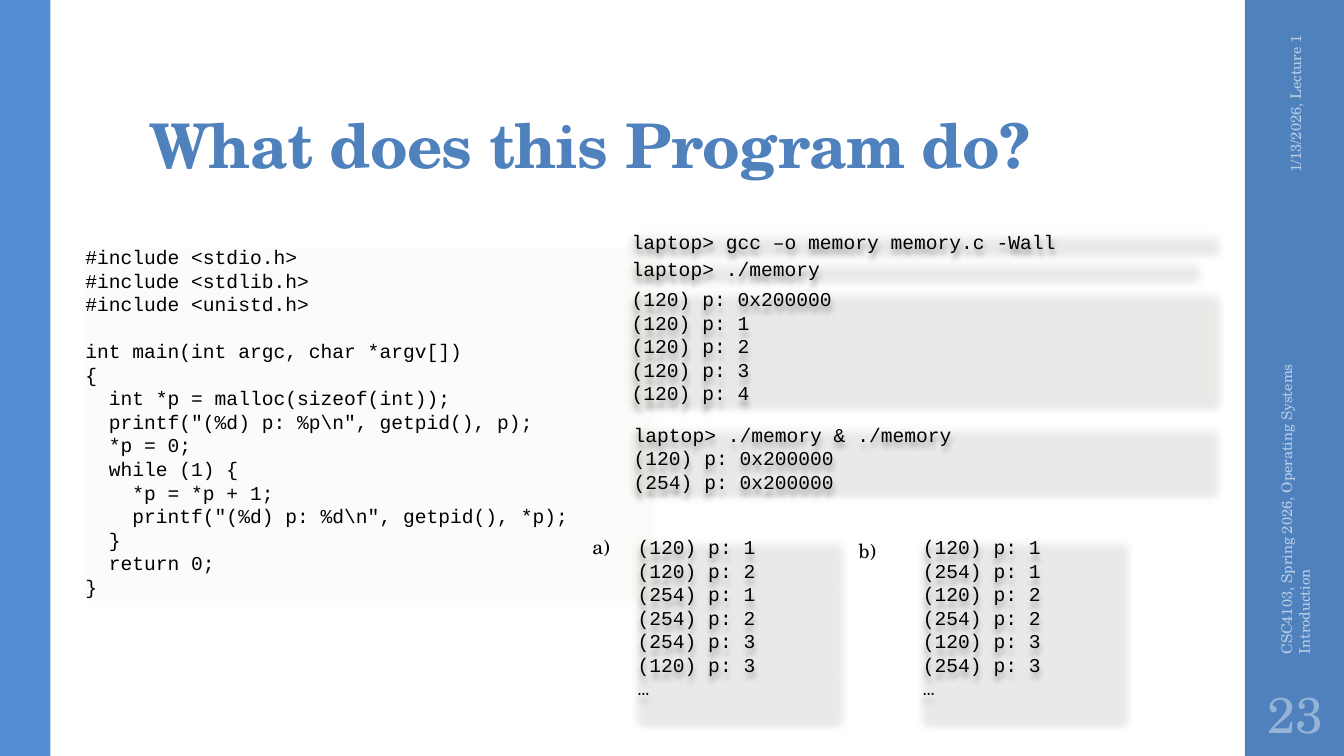
"""Build the slide that asks what a small C memory program prints."""
from dataclasses import dataclass

from lxml import etree
from pptx import Presentation
from pptx.dml.color import RGBColor
from pptx.enum import shapes, text
from pptx.oxml import ns
from pptx.util import Cm, Pt


@dataclass(frozen=True)
class Theme:
    """Colours, fonts and type sizes of the slide."""
    blue: str = "4F81BD"
    light_blue: str = "558ED5"
    panel: str = "EEECE1"
    black: str = "000000"
    footer: str = "B9CDE5"
    number: str = "95B3D7"
    serif: str = "TeX Gyre Schola"
    mono: str = "Courier New"
    title_size: float = 44
    number_size: float = 36
    body_size: float = 14
    footer_size: float = 10.5


@dataclass(frozen=True)
class Box:
    """A rectangle in centimetres."""
    left: float
    top: float
    width: float
    height: float

    def emu(self) -> tuple[Cm, Cm, Cm, Cm]:
        """Return the rectangle as lengths."""
        return Cm(self.left), Cm(self.top), Cm(self.width), Cm(self.height)


@dataclass(frozen=True)
class Panel:
    """A pale panel of monospaced lines."""
    box: Box
    lines: str
    shadow: bool = True


@dataclass(frozen=True)
class Label:
    """A piece of serif text with its format."""
    box: Box
    words: str
    size: float
    color: str
    align: text.PP_ALIGN = text.PP_ALIGN.LEFT
    anchor: text.MSO_ANCHOR = text.MSO_ANCHOR.MIDDLE
    rotation: float = 0
    margins: tuple[float, float, float, float] = (0.25, 0.13, 0.25, 0.13)
    bold: bool = False
    line_spacing: float = 1.0
    tracking: int = 0


T = Theme()
CENTER, RIGHT = text.PP_ALIGN.CENTER, text.PP_ALIGN.RIGHT
TOP, BOTTOM = text.MSO_ANCHOR.TOP, text.MSO_ANCHOR.BOTTOM
CODE_LEADING = 16.86

CODE = r"""#include <stdio.h>
#include <stdlib.h>
#include <unistd.h>

int main(int argc, char *argv[])
{
  int *p = malloc(sizeof(int));
  printf("(%d) p: %p\n", getpid(), p);
  *p = 0;
  while (1) {
    *p = *p + 1;
    printf("(%d) p: %d\n", getpid(), *p);
  }
  return 0;
}"""


def trace(*steps: tuple[int, int | str]) -> str:
    """Write the program's output for pairs of process id and value."""
    return "\n".join(f"({pid}) p: {value}" for pid, value in steps)


ADDRESS = "0x200000"
PANELS = [
    Panel(Box(15.67, 5.66, 15.24, 0.86), "laptop> gcc –o memory memory.c -Wall"),
    Panel(Box(1.9, 6.05, 14.78, 9.25), CODE, shadow=False),
    Panel(Box(15.67, 6.35, 14.78, 0.86), "laptop> ./memory"),
    Panel(Box(15.72, 10.52, 15.16, 2.06),
          "laptop> ./memory & ./memory\n" + trace((120, ADDRESS), (254, ADDRESS))),
    Panel(Box(15.67, 7.11, 15.24, 3.25),
          trace((120, ADDRESS), *((120, n) for n in range(1, 5)))),
    Panel(Box(15.82, 13.36, 5.64, 5.05),
          trace((120, 1), (120, 2), (254, 1), (254, 2), (254, 3), (120, 3)) + "\n…"),
    Panel(Box(23.01, 13.36, 5.64, 5.05),
          trace(*((pid, n) for n in range(1, 4) for pid in (120, 254))) + "\n…"),
]

LABELS = [
    Label(Box(3.51, 0.81, 26.92, 3.89), "What does this Program do?", T.title_size, T.blue,
          anchor=BOTTOM, margins=(0.25, 0.08, 0.25, 0.13), bold=True,
          line_spacing=0.9, tracking=-50),
    Label(Box(14.27, 13.36, 1.9, 0.86), "a) ", T.body_size, T.black, CENTER, TOP),
    Label(Box(20.98, 13.44, 1.9, 0.86), "b) ", T.body_size, T.black, CENTER, TOP),
    Label(Box(30, 2.77, 5.28, 1.02), "1/13/2026, Lecture 1", T.footer_size, T.footer,
          RIGHT, rotation=270),
    Label(Box(27.66, 11.25, 9.96, 1.02),
          "CSC4103, Spring 2026, Operating Systems Introduction",
          T.footer_size, T.footer, rotation=270),
    Label(Box(31.37, 17.15, 2.54, 1.65), "23", T.number_size, T.number, CENTER,
          margins=(0.13, 0.13, 0.13, 0.13)),
]


def add_run(p, words: str, *, font: str, size: float, color: str,
            bold: bool = False, tracking: int = 0) -> None:
    """Add formatted text to a paragraph."""
    r = p.add_run()
    r.text = words
    r.font.name, r.font.size, r.font.bold = font, Pt(size), bold
    r.font.color.rgb = RGBColor.from_string(color)
    if tracking:
        r.font._element.set("spc", str(tracking))


def add_rect(s, box: Box, color: str):
    """Add a plain filled rectangle."""
    sp = s.shapes.add_shape(shapes.MSO_SHAPE.RECTANGLE, *box.emu())
    sp.shadow.inherit = False
    sp.fill.solid()
    sp.fill.fore_color.rgb = RGBColor.from_string(color)
    sp.line.fill.background()
    return sp


def soften(sp, shadow: bool) -> None:
    """Make a panel translucent with soft edges and an optional shadow."""
    pr = sp._element.spPr
    clr = pr.find(ns.qn("a:solidFill")).find(ns.qn("a:srgbClr"))
    etree.SubElement(clr, ns.qn("a:alpha"), val="20000")
    effects = pr.find(ns.qn("a:effectLst"))
    if shadow:
        outer = etree.SubElement(effects, ns.qn("a:outerShdw"), blurRad=str(Pt(4)),
                                 dist=str(Pt(4)), dir="5400000", rotWithShape="0")
        black = etree.SubElement(outer, ns.qn("a:srgbClr"), val=T.black)
        etree.SubElement(black, ns.qn("a:alpha"), val="43000")
    etree.SubElement(effects, ns.qn("a:softEdge"), rad=str(Pt(5)))


def add_panel(s, panel: Panel) -> None:
    """Add a panel and its lines, turning an empty line into spacing."""
    sp = add_rect(s, panel.box, T.panel)
    soften(sp, panel.shadow)
    tf = sp.text_frame
    tf.word_wrap, tf.vertical_anchor = True, TOP
    p, gap = tf.paragraphs[0], 0
    for i, line in enumerate(panel.lines.split("\n")):
        if not line:
            gap = CODE_LEADING
            continue
        p = tf.add_paragraph() if i else p
        p.alignment, p.space_before = text.PP_ALIGN.LEFT, Pt(gap)
        add_run(p, line, font=T.mono, size=T.body_size, color=T.black)
        gap = 0


def add_label(s, label: Label) -> None:
    """Add a text box holding one paragraph."""
    sp = s.shapes.add_textbox(*label.box.emu())
    sp.rotation = label.rotation
    tf = sp.text_frame
    tf.word_wrap, tf.vertical_anchor = True, label.anchor
    tf.margin_left, tf.margin_top, tf.margin_right, tf.margin_bottom = map(Cm, label.margins)
    p = tf.paragraphs[0]
    p.alignment, p.line_spacing = label.align, label.line_spacing
    add_run(p, label.words, font=T.serif, size=label.size, color=label.color,
            bold=label.bold, tracking=label.tracking)


def main() -> None:
    """Build and save the slide."""
    prs = Presentation()
    prs.slide_width, prs.slide_height = Cm(33.87), Cm(19.05)
    s = prs.slides.add_slide(prs.slide_layouts[6])
    add_rect(s, Box(31.37, 0, 2.54, 19.05), T.blue)
    add_rect(s, Box(0, 0, 1.27, 19.05), T.light_blue)
    for panel in PANELS:
        add_panel(s, panel)
    for label in LABELS:
        add_label(s, label)
    prs.save("out.pptx")


if __name__ == "__main__":
    main()
